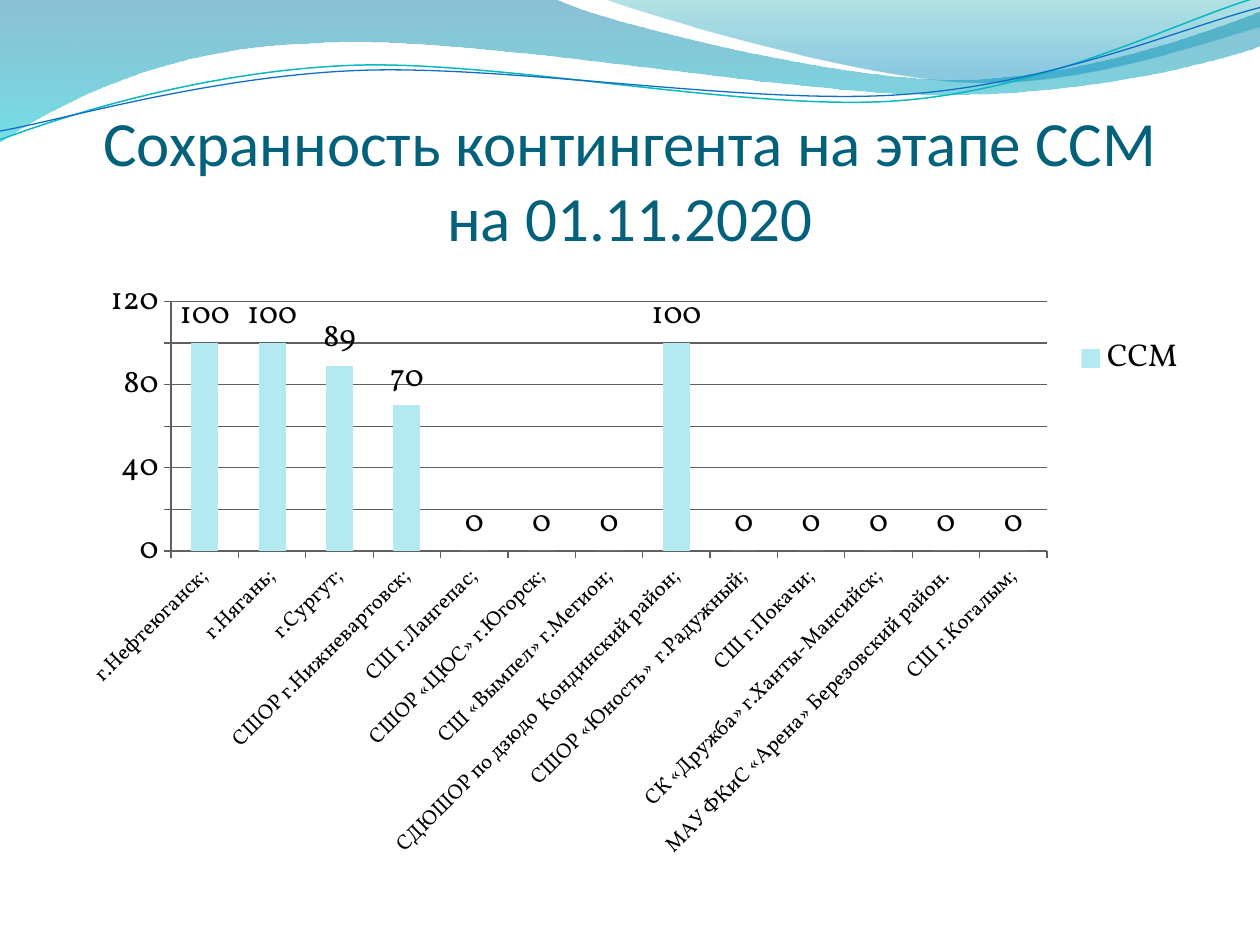
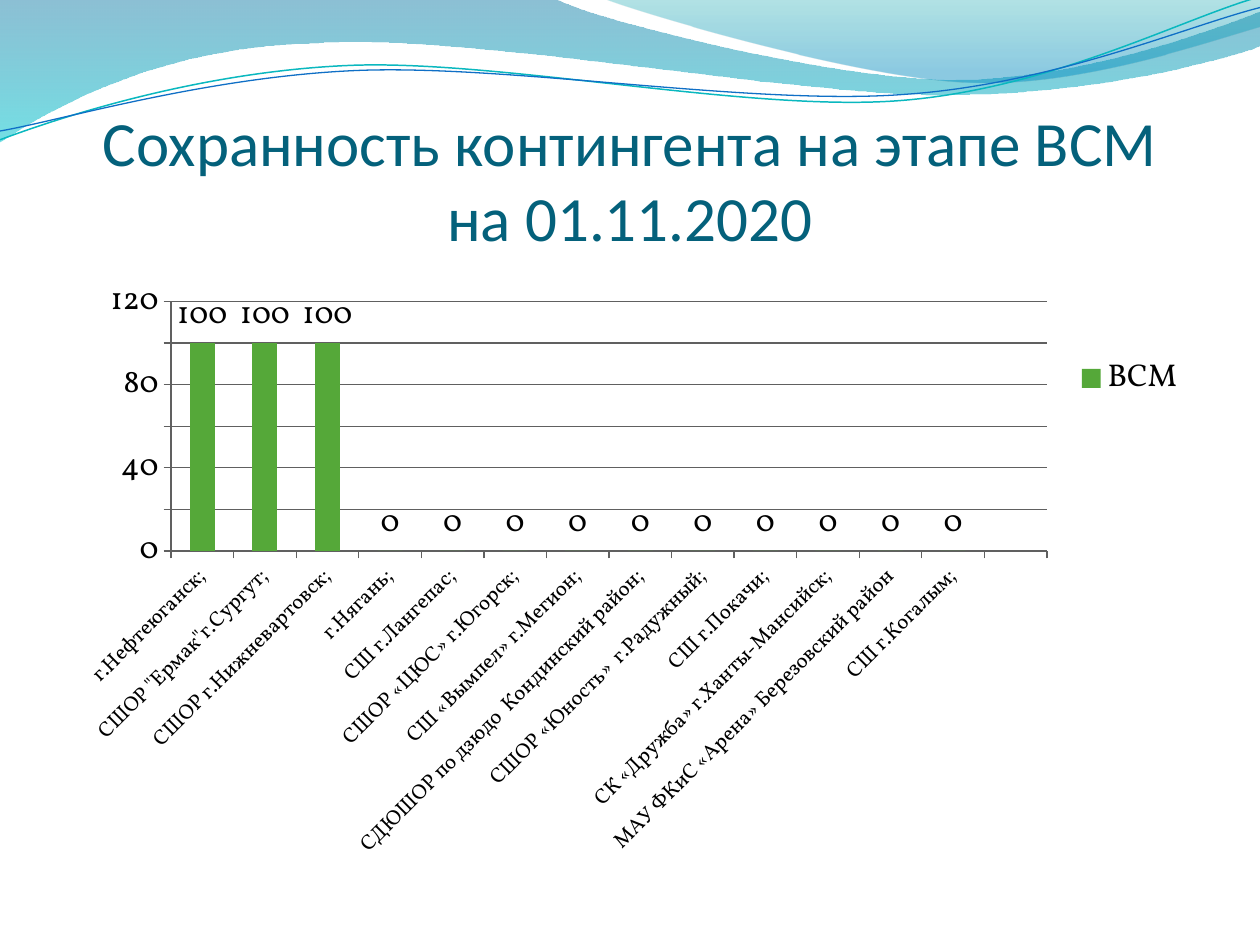
"""Builds two slides on athlete retention, each with a title and a column chart."""
import lxml.etree
import pptx
import pptx.chart.data
import pptx.dml.color
import pptx.enum.chart
import pptx.enum.text
import pptx.oxml.ns
import pptx.util

Cm = pptx.util.Cm
Pt = pptx.util.Pt
RGBColor = pptx.dml.color.RGBColor
qn = pptx.oxml.ns.qn

TITLE_COLOR = RGBColor(0x04, 0x61, 0x7B)
TEXT_COLOR = RGBColor(0x00, 0x00, 0x00)
GRID_COLOR = RGBColor(0x60, 0x60, 0x60)
SSM_COLOR = RGBColor(0xB3, 0xEA, 0xF2)
VSM_COLOR = RGBColor(0x55, 0xA8, 0x39)
DEEP_BLUE = RGBColor(0x00, 0x74, 0xA1)
AQUA = RGBColor(0x00, 0xC6, 0xCF)
TEAL = RGBColor(0x00, 0xA1, 0xA9)
SEA_BLUE = RGBColor(0x00, 0x8B, 0xBF)
TEAL_LINE = RGBColor(0x0A, 0xB8, 0xBF)
BLUE_LINE = RGBColor(0x0F, 0x6F, 0xC6)
TITLE_FONT = "Calibri"
CHART_FONT = "Vollkorn"

UNIT_CM = 2.54

BIG_WAVE = [
    [(0, 0)],
    [(4.4, -0.01)],
    [(4.76, 0.17), (6.64, 0.63), (7.58, 0.63)],
    [(8.53, 0.63), (9.58, 0.26), (10, 0.09)],
    [(10.01, 0.36)],
    [(9.83, 0.44), (8.7, 0.76), (7.46, 0.75)],
    [(6.22, 0.75), (3.82, 0.28), (2.57, 0.34)],
    [(1.29, 0.36), (0.46, 0.83), (-0.01, 1.13)],
    [(0, 0)],
]
RIGHT_WAVE = [
    [(4.79, -0.01)],
    [(5.09, 0.11), (6.82, 0.62), (7.69, 0.65)],
    [(8.56, 0.69), (9.61, 0.32), (10, 0.21)],
    [(10, 0)],
    [(4.79, -0.01)],
]
TEAL_CURVE = [
    [(0, 1.11)],
    [(0.48, 0.93), (1.58, 0.57), (2.77, 0.52)],
    [(3.95, 0.47), (5.93, 0.89), (7.13, 0.8)],
    [(8.33, 0.71), (9.38, 0.15), (9.98, -0.02)],
]
BLUE_CURVE = [
    [(0, 1.04)],
    [(0.47, 0.96), (1.64, 0.61), (2.83, 0.56)],
    [(4.03, 0.51), (5.97, 0.84), (7.17, 0.75)],
    [(8.36, 0.67), (9.41, 0.21), (10, 0.06)],
]

NEFTEYUGANSK = "г.Нефтеюганск;"
NYAGAN = " г.Нягань;"
NIZHNEVARTOVSK = "СШОР г.Нижневартовск;"
KOGALYM = "СШ г.Когалым;"
ARENA = "МАУ ФКиС «Арена» Березовский район"
SCHOOLS = [
    "СШ г.Лангепас;",
    "СШОР «ЦЮС» г.Югорск;",
    "СШ «Вымпел» г.Мегион;",
    "СДЮШОР по дзюдо  Кондинский район;",
    "СШОР «Юность»  г.Радужный;",
    "СШ г.Покачи;",
    "СК «Дружба» г.Ханты-Мансийск;",
]
SSM_CATEGORIES = [" " + NEFTEYUGANSK, NYAGAN, " г.Сургут;", NIZHNEVARTOVSK,
                  *SCHOOLS, ARENA + ".", KOGALYM]
SSM_VALUES = [100, 100, 89, 70, 0, 0, 0, 100, 0, 0, 0, 0, 0]
VSM_CATEGORIES = [NEFTEYUGANSK, ' СШОР "Ермак"г.Сургут;', NIZHNEVARTOVSK, NYAGAN,
                  *SCHOOLS, ARENA, KOGALYM, ""]
VSM_VALUES = [100] * 3 + [0] * 10 + [None]


def add_outline(s, segments, close):
    """Add a freeform of straight lines and cubic curves, without a shadow."""
    points = [(Cm(x * UNIT_CM), Cm(y * UNIT_CM)) for seg in segments for x, y in seg]
    builder = s.shapes.build_freeform(*points[0])
    builder.add_line_segments(points[1:], close=close)
    shape = builder.convert_to_shape()
    shape.shadow.inherit = False
    lines = iter(list(shape.element.iter(qn("a:lnTo"))))
    for seg in segments[1:]:
        steps = [next(lines) for _ in seg]
        if len(steps) == 3:
            curve = lxml.etree.Element(qn("a:cubicBezTo"))
            steps[0].addprevious(curve)
            for step in steps:
                curve.append(step[0])
                step.getparent().remove(step)
    return shape


def add_wave(s, segments, stops):
    """Add a wave with a see-through gradient running downwards."""
    shape = add_outline(s, segments, True)
    shape.line.fill.background()
    shape.fill.gradient()
    shape.fill.gradient_angle = 270
    for stop, (position, color, _) in zip(shape.fill.gradient_stops, stops):
        stop.position = position
        stop.color.rgb = color
    for clr, (_, _, opacity) in zip(shape.element.iter(qn("a:srgbClr")), stops):
        lxml.etree.SubElement(clr, qn("a:alpha"), val=str(opacity * 1000))
    return shape


def add_curve(s, segments, color, width):
    """Add an open curved line."""
    shape = add_outline(s, segments, False)
    shape.fill.background()
    shape.line.color.rgb = color
    shape.line.width = Pt(width)
    return shape


def add_band(s):
    """Draw the wave band and move it to the layout that all slides share."""
    band = [
        add_wave(s, BIG_WAVE, [(0, DEEP_BLUE, 45), (1, AQUA, 55)]),
        add_wave(s, RIGHT_WAVE, [(0, TEAL, 30), (0.8, SEA_BLUE, 45)]),
        add_curve(s, TEAL_CURVE, TEAL_LINE, 0.85),
        add_curve(s, BLUE_CURVE, BLUE_LINE, 0.75),
    ]
    tree = s.slide_layout.placeholders[0].element.getparent()
    for shape in band:
        tree.append(shape.element)


def set_title(s, lines):
    """Place and fill the title placeholder."""
    title = s.shapes.title
    title.left, title.top = Cm(1.27), Cm(1.96)
    title.width, title.height = Cm(22.86), Cm(3.17)
    tf = title.text_frame
    tf.word_wrap = True
    tf.auto_size = pptx.enum.text.MSO_AUTO_SIZE.NONE
    tf.vertical_anchor = pptx.enum.text.MSO_ANCHOR.BOTTOM
    tf.margin_left = tf.margin_right = tf.margin_bottom = 0
    tf.margin_top = Cm(0.13)
    p = tf.paragraphs[0]
    p.alignment = pptx.enum.text.PP_ALIGN.CENTER
    for i, line in enumerate(lines):
        if i:
            p.add_line_break()
        r = p.add_run()
        r.text = line
        r.font.size = Pt(36)
        r.font.name = TITLE_FONT
        r.font.color.rgb = TITLE_COLOR


def set_font(font, size):
    """Apply the chart font."""
    font.size = Pt(size)
    font.name = CHART_FONT
    font.color.rgb = TEXT_COLOR


def set_layout(parent, index, inner=False, **box):
    """Give a chart part a fixed place, as percentages of the chart."""
    for old in parent.findall(qn("c:layout")):
        parent.remove(old)
    layout = lxml.etree.Element(qn("c:layout"))
    manual = lxml.etree.SubElement(layout, qn("c:manualLayout"))
    settings = {"layoutTarget": "inner"} if inner else {}
    settings.update(xMode="edge", yMode="edge")
    settings.update({tag: round(value / 100, 4) for tag, value in box.items()})
    for tag, value in settings.items():
        lxml.etree.SubElement(manual, qn("c:" + tag), val=str(value))
    parent.insert(index, layout)


def add_column_chart(s, name, categories, values, color, legend_y):
    """Add the column chart of one training stage."""
    data = pptx.chart.data.CategoryChartData()
    data.categories = categories
    data.add_series(name, values)
    chart = s.shapes.add_chart(pptx.enum.chart.XL_CHART_TYPE.COLUMN_CLUSTERED,
                               Cm(1.27), Cm(5.38), Cm(22.86), Cm(12.19), data).chart
    chart.has_title = False
    set_font(chart.font, 18)

    plot = chart.plots[0]
    plot.vary_by_categories = False
    plot.gap_width = 150
    fill = plot.series[0].format.fill
    fill.solid()
    fill.fore_color.rgb = color
    plot.has_data_labels = True
    labels = plot.data_labels
    labels.show_value = True
    labels.position = pptx.enum.chart.XL_LABEL_POSITION.OUTSIDE_END
    set_font(labels.font, 18)

    value_axis, category_axis = chart.value_axis, chart.category_axis
    value_axis.minimum_scale, value_axis.maximum_scale = 0, 120
    value_axis.major_unit = 20
    value_axis.has_major_gridlines = True
    for axis in (value_axis, category_axis):
        axis.major_tick_mark = pptx.enum.chart.XL_TICK_MARK.OUTSIDE
    for part in (value_axis, category_axis, value_axis.major_gridlines):
        part.format.line.color.rgb = GRID_COLOR
        part.format.line.width = Pt(0.75)
    set_font(value_axis.tick_labels.font, 18)
    set_font(category_axis.tick_labels.font, 12)

    chart.has_legend = True
    chart.legend.position = pptx.enum.chart.XL_LEGEND_POSITION.RIGHT
    chart.legend.include_in_layout = False
    set_font(chart.legend.font, 18)

    root = chart.element
    body = root.find(".//" + qn("c:catAx") + "/" + qn("c:txPr") + "/" + qn("a:bodyPr"))
    body.set("rot", "-2700000")
    set_layout(root.find(".//" + qn("c:plotArea")), 0, True, x=9.53, y=5.73, w=77.25, h=41.25)
    set_layout(root.find(".//" + qn("c:legend")), 1, x=88.55, y=legend_y, w=11, h=8)


def main():
    """Build and save the presentation."""
    prs = pptx.Presentation()
    prs.slide_width, prs.slide_height = Cm(25.4), Cm(19.05)
    stages = [
        ("ССМ", SSM_CATEGORIES, SSM_VALUES, SSM_COLOR, 11.15),
        ("ВСМ", VSM_CATEGORIES, VSM_VALUES, VSM_COLOR, 14.45),
    ]
    for i, stage in enumerate(stages):
        s = prs.slides.add_slide(prs.slide_layouts[5])
        if i == 0:
            add_band(s)
        set_title(s, [f"Сохранность контингента на этапе {stage[0]}", "на 01.11.2020"])
        add_column_chart(s, *stage)
    prs.save("out.pptx")


if __name__ == "__main__":
    main()
